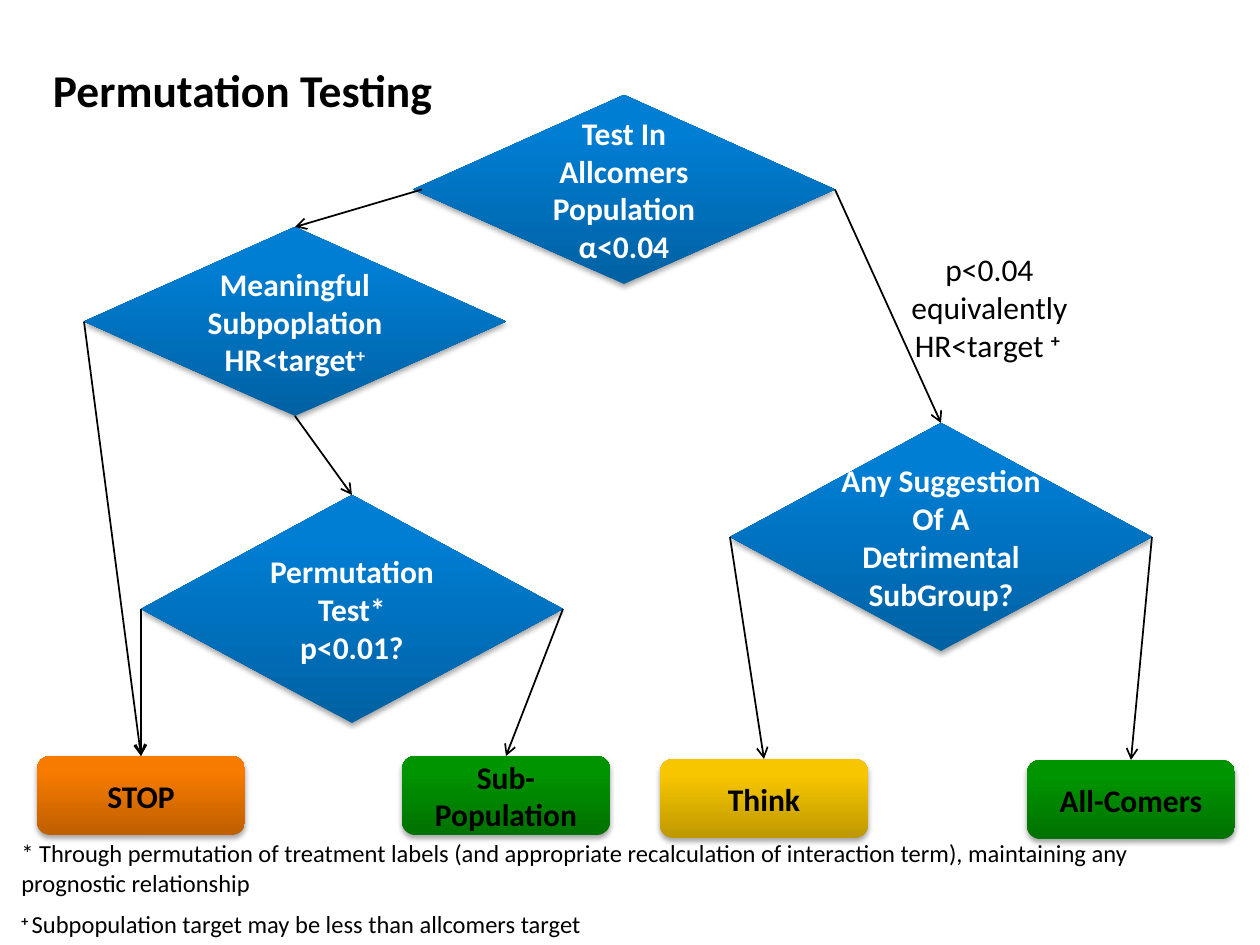
from copy import deepcopy

from lxml.etree import SubElement
from pptx import Presentation
from pptx.dml.color import RGBColor
from pptx.enum.shapes import MSO_CONNECTOR, MSO_SHAPE
from pptx.enum.text import MSO_ANCHOR, MSO_AUTO_SIZE, PP_ALIGN
from pptx.oxml.ns import qn
from pptx.util import Pt

PX = 914400 / 126
BLACK = RGBColor(0x00, 0x00, 0x00)
WHITE = RGBColor(0xFF, 0xFF, 0xFF)
# Gradient colours at 0, 80 and 100 %
BLUE = [RGBColor(0x00, 0x61, 0xA3), RGBColor(0x00, 0x7E, 0xD3), RGBColor(0x00, 0x7F, 0xD4)]
GREEN = [RGBColor(0x00, 0x72, 0x00), RGBColor(0x00, 0x94, 0x00), RGBColor(0x00, 0x95, 0x00)]
YELLOW = [RGBColor(0xBE, 0x98, 0x00), RGBColor(0xF7, 0xC6, 0x00), RGBColor(0xF8, 0xC7, 0x00)]
ORANGE = [RGBColor(0xBE, 0x5F, 0x00), RGBColor(0xF7, 0x7B, 0x00), RGBColor(0xF8, 0x7C, 0x00)]


def px(*values):
    return [round(v * PX) for v in values]


def add_text(p, text, size, color=BLACK, bold=False, sup=False):
    for i, line in enumerate(text.split("\n")):
        if i:
            p.add_line_break()
        r = p.add_run()
        r.text = line
        r.font.name = "Calibri"
        r.font.size = Pt(size)
        r.font.bold = bold
        r.font.color.rgb = color
        if sup:
            r._r.get_or_add_rPr().set("baseline", "30000")


prs = Presentation()
prs.slide_width, prs.slide_height = px(1260, 945)
s = prs.slides.add_slide(prs.slide_layouts[5])

# Title
title = s.shapes.title
title.left, title.top, title.width, title.height = px(53, 62, 1016, 180)
tf = title.text_frame
tf.margin_left = tf.margin_right = tf.margin_top = tf.margin_bottom = 0
tf.vertical_anchor = MSO_ANCHOR.TOP
p = tf.paragraphs[0]
p.alignment = PP_ALIGN.LEFT
add_text(p, "Permutation Testing", 26, bold=True)

# Decisions and outcomes: name, left, top, width, height, side inset, colours, text
DIAMOND, BOX = MSO_SHAPE.DIAMOND, MSO_SHAPE.ROUNDED_RECTANGLE
nodes = [
    ("test", DIAMOND, 413, 95, 422, 189, 13, BLUE, "Test In\nAllcomers Population\nα<0.04"),
    ("detriment", DIAMOND, 730, 423, 422, 228, 0, BLUE,
     "Any Suggestion Of A Detrimental SubGroup?"),
    ("permutation", DIAMOND, 141, 495, 422, 228, 0, BLUE, "Permutation Test*\np<0.01?"),
    ("meaningful", DIAMOND, 84, 227, 422, 189, 0, BLUE, "Meaningful Subpoplation HR<target"),
    ("stop", BOX, 37, 756, 208, 79, 13, ORANGE, "STOP"),
    ("sub", BOX, 402, 756, 208, 79, 13, GREEN, "Sub-Population"),
    ("think", BOX, 660, 759, 208, 79, 13, YELLOW, "Think"),
    ("all", BOX, 1027, 760, 208, 79, 13, GREEN, "All-Comers"),
]
shapes = {}
for name, kind, x, y, w, h, inset, colors, text in nodes:
    sp = shapes[name] = s.shapes.add_shape(kind, *px(x, y, w, h))
    sp.line.fill.background()

    # Three-stop gradient, dark at the bottom
    sp.fill.gradient()
    sp.fill.gradient_angle = 90
    stop_list = sp._element.spPr.find(".//" + qn("a:gsLst"))
    stop_list.append(deepcopy(stop_list[-1]))
    for stop, position, color in zip(sp.fill.gradient_stops, (0, 0.8, 1), colors):
        stop.position = position
        stop.color.rgb = color

    # Soft shadow below
    sp.shadow.inherit = False
    effects = sp._element.spPr.find(qn("a:effectLst"))
    shadow = SubElement(effects, qn("a:outerShdw"), blurRad=str(Pt(3.1)), dist=str(Pt(1.8)),
                        dir="5400000", rotWithShape="0")
    shade = SubElement(shadow, qn("a:srgbClr"), val="000000")
    SubElement(shade, qn("a:alpha"), val="35000")

    tf = sp.text_frame
    tf.word_wrap = True
    tf.vertical_anchor = MSO_ANCHOR.MIDDLE
    tf.margin_left = tf.margin_right = px(inset)[0]
    p = tf.paragraphs[0]
    p.alignment = PP_ALIGN.CENTER
    color = WHITE if kind == DIAMOND else BLACK
    add_text(p, text, 18, color, bold=True)
    if name == "meaningful":
        add_text(p, "+", 18, color, bold=True, sup=True)

# Arrows between connection sites
TOP, LEFT, BOTTOM, RIGHT = range(4)
links = [
    ("test", LEFT, "meaningful"), ("test", RIGHT, "detriment"),
    ("meaningful", LEFT, "stop"), ("meaningful", BOTTOM, "permutation"),
    ("permutation", LEFT, "stop"), ("permutation", RIGHT, "sub"),
    ("detriment", LEFT, "think"), ("detriment", RIGHT, "all"),
]
for start, site, end in links:
    c = s.shapes.add_connector(MSO_CONNECTOR.STRAIGHT, 0, 0, 0, 0)
    c.begin_connect(shapes[start], site)
    c.end_connect(shapes[end], TOP)
    if end == "meaningful":
        c.begin_x = px(422)[0]
    c.line.width = Pt(1)
    c.line.color.rgb = BLACK
    SubElement(c.line._get_or_add_ln(), qn("a:tailEnd"), type="arrow")
    SubElement(c._element.spPr, qn("a:effectLst"))

# Branch label
tf = s.shapes.add_textbox(*px(891, 244, 197, 127)).text_frame
tf.word_wrap = False
tf.auto_size = MSO_AUTO_SIZE.SHAPE_TO_FIT_TEXT
p = tf.paragraphs[0]
p.alignment = PP_ALIGN.CENTER
add_text(p, "p<0.04\nequivalently\nHR<target ", 18)
add_text(p, "+ ", 18, bold=True, sup=True)

# Footnotes
tf = s.shapes.add_textbox(*px(9, 832, 1226, 117)).text_frame
tf.word_wrap = True
tf.auto_size = MSO_AUTO_SIZE.SHAPE_TO_FIT_TEXT
add_text(tf.paragraphs[0], "* Through permutation of treatment labels (and appropriate recalculation "
         "of interaction term), maintaining any prognostic relationship", 14)
p = tf.add_paragraph()
p.space_before = Pt(7)
add_text(p, "+ ", 14, bold=True, sup=True)
add_text(p, "Subpopulation target may be less than allcomers target", 14)

prs.save("out.pptx")
